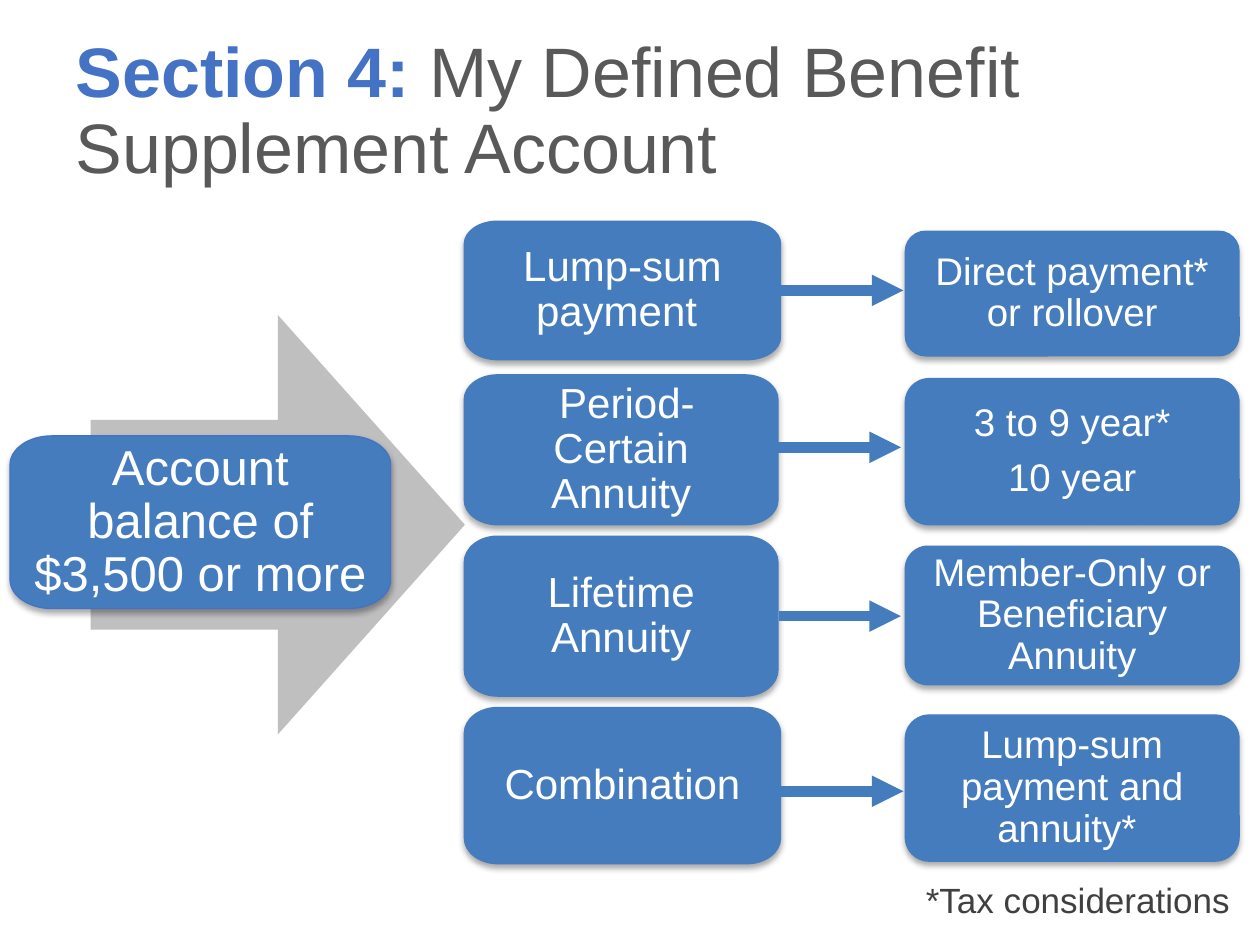
from lxml import etree
from pptx import Presentation
from pptx.dml.color import RGBColor
from pptx.enum.shapes import MSO_CONNECTOR as Link, MSO_SHAPE as Shape
from pptx.enum.text import MSO_ANCHOR as Anchor, MSO_AUTO_SIZE as Fit, PP_ALIGN as Align
from pptx.oxml.ns import qn
from pptx.util import Inches, Pt

BLUE, ACCENT, SILVER, WHITE = "457CBE", "4472C4", "BFBFBF", "FFFFFF"


def color(code):
    return RGBColor.from_string(code)


def add_text(para, text, size=20, code=WHITE, bold=False, align=Align.LEFT,
             spacing=None, after=None):
    para.alignment = align
    if spacing:
        para.line_spacing = spacing
    if after is not None:
        para.space_after = Pt(after)
    span = para.add_run()
    span.text = text
    span.font.name = "Arial"
    span.font.size = Pt(size)
    span.font.bold = bold
    span.font.color.rgb = color(code)


def round_corners(box):
    """Turn every second edge of an eight-sided outline into a curve."""
    outline = box._element.spPr.find(".//" + qn("a:path"))
    edges = [edge for edge in outline if edge.tag != qn("a:close")]
    ends = [(int(edge[0].get("x")), int(edge[0].get("y"))) for edge in edges]
    for index in range(1, len(edges), 2):
        start, end = ends[index - 1], ends[index]
        # The sharp corner lies left/right of one end and above/below the other
        corner = (start[0], end[1]) if index % 4 == 1 else (end[0], start[1])
        curve = etree.Element(qn("a:cubicBezTo"))
        handles = [tuple(round(p + 0.55 * (c - p)) for p, c in zip(point, corner))
                   for point in (start, end)]
        for x, y in (*handles, end):
            etree.SubElement(curve, qn("a:pt"), x=str(x), y=str(y))
        outline.replace(edges[index], curve)


class Builder:
    def __init__(self, deck):
        self.page = deck.slides.add_slide(deck.slide_layouts[5])
        self.shapes = self.page.shapes

    def title(self, lead, rest):
        box = self.shapes.title
        box.left, box.top, box.width, box.height = map(Inches, (0.5, 0.25, 9, 1.25))
        frame = box.text_frame
        frame.auto_size = Fit.NONE
        frame.vertical_anchor = Anchor.MIDDLE
        frame.margin_top, frame.margin_bottom = Inches(0.07), Inches(0.03)
        para = frame.paragraphs[0]
        add_text(para, lead, size=40, code=ACCENT, bold=True, spacing=0.9)
        add_text(para, rest, size=40, code="595959", spacing=0.9)

    def paint(self, box, code):
        box.shadow.inherit = False
        box.fill.solid()
        box.fill.fore_color.rgb = color(code)
        box.line.fill.background()

    def arrow(self, *place):
        box = self.shapes.add_shape(Shape.RIGHT_ARROW, *map(Inches, place))
        self.paint(box, SILVER)

    def soft_shadow(self, box):
        effects = box._element.spPr.find(qn("a:effectLst"))
        shadow = etree.SubElement(effects, qn("a:outerShdw"), blurRad=str(Pt(3.5)),
                                  dist=str(Pt(2.2)), dir="5400000", rotWithShape="0")
        black = etree.SubElement(shadow, qn("a:srgbClr"), val="000000")
        etree.SubElement(black, qn("a:alpha"), val="32000")

    def fill_card(self, box, lines, size):
        self.paint(box, BLUE)
        self.soft_shadow(box)
        frame = box.text_frame
        frame.word_wrap = True
        frame.vertical_anchor = Anchor.MIDDLE
        frame.margin_left = frame.margin_right = Inches(0.15)
        frame.margin_top = frame.margin_bottom = Inches(0.15)
        for index, line in enumerate(lines):
            para = frame.add_paragraph() if index else frame.paragraphs[0]
            add_text(para, line, size=size, align=Align.CENTER,
                     spacing=0.9, after=0.35 * size)
        return box

    def wide_corner_card(self, place, text, size=24, rx=0.27):
        left, top, width, height = place
        right, bottom, ry = left + width, top + height, height / 6
        points = [(left, top + ry), (left + rx, top), (right - rx, top),
                  (right, top + ry), (right, bottom - ry), (right - rx, bottom),
                  (left + rx, bottom), (left, bottom - ry)]
        points = [(Inches(x), Inches(y)) for x, y in points]
        outline = self.shapes.build_freeform(*points[0])
        outline.add_line_segments(points[1:], close=True)
        box = outline.convert_to_shape()
        round_corners(box)
        return self.fill_card(box, [text], size)

    def result_card(self, place, lines):
        box = self.shapes.add_shape(Shape.ROUNDED_RECTANGLE, *map(Inches, place))
        return self.fill_card(box, lines, 22)

    def connector(self, start, end, y, source=None):
        line = self.shapes.add_connector(
            Link.STRAIGHT, Inches(start), Inches(y), Inches(end), Inches(y))
        if source is not None:
            line.begin_connect(source, 3)
        line.line.color.rgb = color(BLUE)
        line.line.width = Pt(6)
        properties = line._element.spPr
        etree.SubElement(properties.find(qn("a:ln")), qn("a:tailEnd"), type="triangle")
        etree.SubElement(properties, qn("a:effectLst"))

    def note(self, place, text):
        frame = self.shapes.add_textbox(*map(Inches, place)).text_frame
        frame.word_wrap = True
        frame.auto_size = Fit.SHAPE_TO_FIT_TEXT
        add_text(frame.paragraphs[0], text, code="404040")


# Option, its top, height and width; connector height (None: joined at the
# option's middle); result lines, their top and height
ROWS = [
    ("Lump-sum payment ", 1.75, 1.11, 2.52, None,
     ["Direct payment* or rollover"], 1.83, 1),
    (" Period-Certain Annuity", 2.97, 1.2, 2.5, 3.55,
     ["3 to 9 year*", "10 year"], 3, 1.17),
    ("Lifetime Annuity", 4.25, 1.28, 2.5, None,
     ["Member-Only or Beneficiary Annuity"], 4.33, 1.11),
    ("Combination", 5.61, 1.25, 2.52, 6.28,
     ["Lump-sum payment and annuity* "], 5.67, 1.17),
]


def main():
    deck = Presentation()
    deck.slide_width, deck.slide_height = Inches(10), Inches(7.5)
    builder = Builder(deck)
    builder.title("Section 4: ", "My Defined Benefit Supplement Account")

    # Starting balance
    builder.arrow(0.72, 2.5, 2.97, 3.33)
    balance = builder.wide_corner_card(
        (0.08, 3.46, 3.02, 1.37), "Account balance of $3,500 or more", size=28, rx=0.33)
    balance.line.color.rgb = color(ACCENT)
    balance.line.width = Pt(0.75)

    # Options and their results
    option_left, result_left = 3.68, 7.18
    for option, top, height, width, link_y, results, result_top, result_height in ROWS:
        card = builder.wide_corner_card((option_left, top, width, height), option)
        start = option_left + width - 0.01
        if link_y is None:
            builder.connector(start, start + 0.98, top + height / 2, source=card)
        else:
            builder.connector(start, start + 0.98, link_y)
        builder.result_card((result_left, result_top, 2.66, result_height), results)

    # Footnote
    builder.note((7.25, 6.92, 3.83, 0.44), "*Tax considerations")
    deck.save("out.pptx")


if __name__ == "__main__":
    main()
